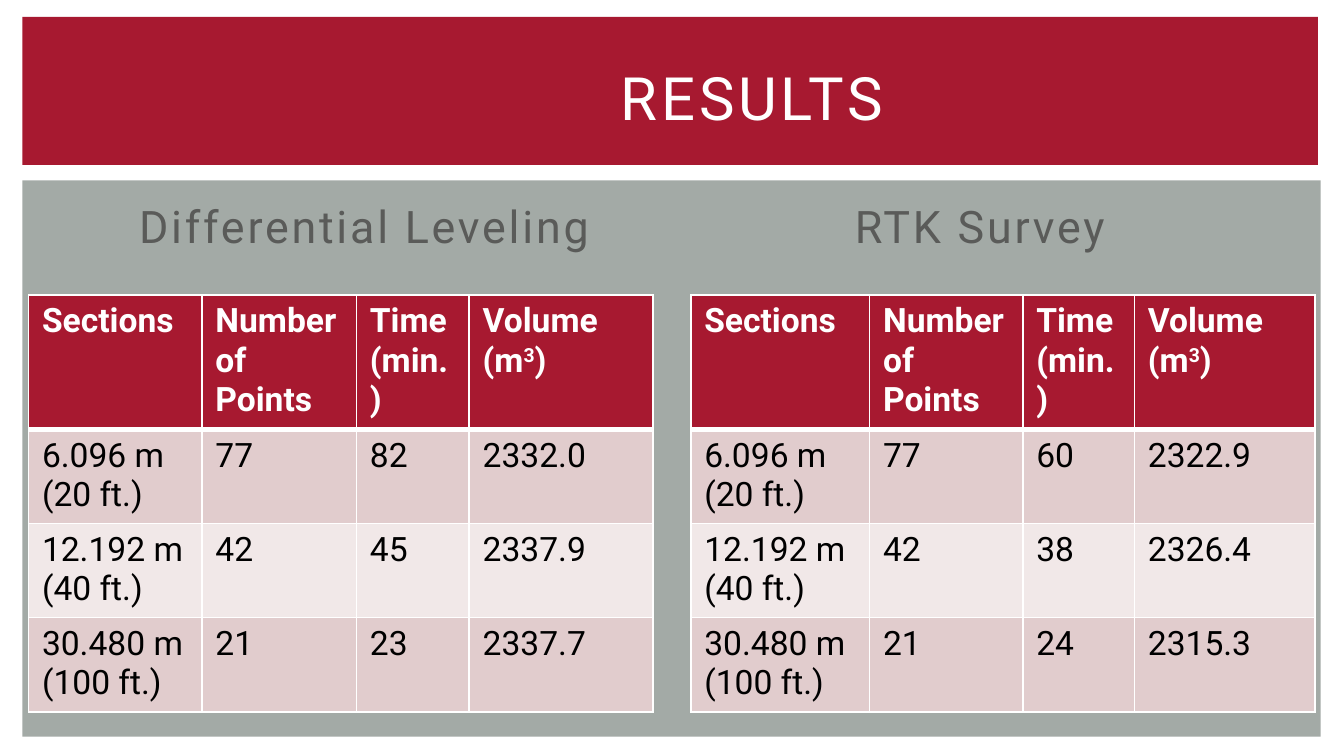
from lxml.etree import SubElement
from pptx import Presentation
from pptx.dml.color import RGBColor
from pptx.enum.shapes import MSO_SHAPE
from pptx.enum.text import MSO_ANCHOR, PP_ALIGN
from pptx.oxml.ns import qn
from pptx.util import Pt

RED, GRAY, WHITE, BLACK = "A71930", "A3AAA6", "FFFFFF", "000000"
HEADING, BAND_DARK, BAND_LIGHT = "5A5B59", "E1CCCD", "F1E8E8"


def rgb(value):
    return RGBColor.from_string(value)


def add_run(p, text, size=18, color=BLACK, bold=False, spacing=0, baseline=0):
    r = p.add_run()
    r.text = text
    r.font.name = SlideBuilder.FONT
    r.font.size = Pt(size)
    r.font.bold = bold
    r.font.color.rgb = rgb(color)
    rPr = r._r.get_or_add_rPr()
    if spacing:
        rPr.set("spc", str(round(spacing * 100)))
    if baseline:
        rPr.set("baseline", str(baseline * 1000))


class SlideBuilder:
    FONT = "Roboto"

    def __init__(self, slide):
        self.s = slide

    def panel(self, x, y, w, h, fill):
        sp = self.s.shapes.add_shape(MSO_SHAPE.RECTANGLE, Pt(x), Pt(y), Pt(w), Pt(h))
        sp.shadow.inherit = False
        sp.fill.solid()
        sp.fill.fore_color.rgb = rgb(fill)
        sp.line.fill.background()

    def text(self, x, y, w, h, text, anchor, **style):
        tf = self.s.shapes.add_textbox(Pt(x), Pt(y), Pt(w), Pt(h)).text_frame
        tf.word_wrap = True
        tf.vertical_anchor = anchor
        p = tf.paragraphs[0]
        p.alignment = PP_ALIGN.CENTER
        add_run(p, text, **style)

    def cell(self, cell, lines, fill, top=1, bottom=1, **style):
        # Borders come before the fill in the cell properties
        tcPr = cell._tc.get_or_add_tcPr()
        for side, width in zip("LRTB", (1, 1, top, bottom)):
            ln = SubElement(tcPr, qn(f"a:ln{side}"), w=str(Pt(width)))
            SubElement(SubElement(ln, qn("a:solidFill")), qn("a:srgbClr"), val=WHITE)
        cell.fill.solid()
        cell.fill.fore_color.rgb = rgb(fill)
        tf = cell.text_frame
        for i, line in enumerate(lines.split("\n")):
            p = tf.add_paragraph() if i else tf.paragraphs[0]
            # Text between carets is raised
            for j, part in enumerate(line.split("^")):
                add_run(p, part, baseline=30 * (j % 2), **style)

    def table(self, x, y, widths, height, rows):
        frame = self.s.shapes.add_table(
            len(rows), len(widths), Pt(x), Pt(y), Pt(sum(widths)), Pt(height))
        table = frame.table
        for column, width in zip(table.columns, widths):
            column.width = Pt(width)
        for i, row in enumerate(rows):
            table.rows[i].height = Pt(29.5)
            if i == 0:
                look = dict(fill=RED, color=WHITE, bold=True, bottom=3)
            else:
                look = dict(fill=BAND_DARK if i % 2 else BAND_LIGHT,
                            top=3 if i == 1 else 1)
            for j, value in enumerate(row):
                self.cell(table.cell(i, j), value, **look)
        frame.height = Pt(height)


HEADER = ("Sections", "Number of Points", "Time (min.)", "Volume\n(m^3^)")
SECTIONS = ("6.096 m\n(20 ft.)", "12.192 m\n(40 ft.)", "30.480 m\n(100 ft.)")
POINTS = ("77", "42", "21")

# Heading, heading left, table left, column widths, times, volumes
SURVEYS = (
    ("Differential Leveling", 36, 15.3, (92.9, 82.8, 60.4, 98.6),
     ("82", "45", "23"), ("2332.0", "2337.9", "2337.7")),
    ("RTK Survey", 365.8, 370.1, (95.8, 82.1, 59.8, 96.7),
     ("60", "38", "24"), ("2322.9", "2326.4", "2315.3")),
)


def main():
    prs = Presentation()
    prs.slide_width, prs.slide_height = Pt(720), Pt(405)
    b = SlideBuilder(prs.slides.add_slide(prs.slide_layouts[6]))

    # Background panels
    b.panel(12, 96.6, 695.5, 298, GRAY)
    b.panel(12, 9, 694, 79.4, RED)

    # Title
    b.text(116, 21, 574, 62, "RESULTS", MSO_ANCHOR.MIDDLE,
           size=32, color=WHITE, spacing=2)

    # Survey headings and tables
    for heading, head_x, table_x, widths, times, volumes in SURVEYS:
        b.text(head_x, 101.5, 318.2, 37.5, heading, MSO_ANCHOR.BOTTOM,
               size=24, color=HEADING, spacing=1.5)
        rows = [HEADER, *zip(SECTIONS, POINTS, times, volumes)]
        b.table(table_x, 158, widths, 201.6, rows)

    prs.save("out.pptx")


if __name__ == "__main__":
    main()
